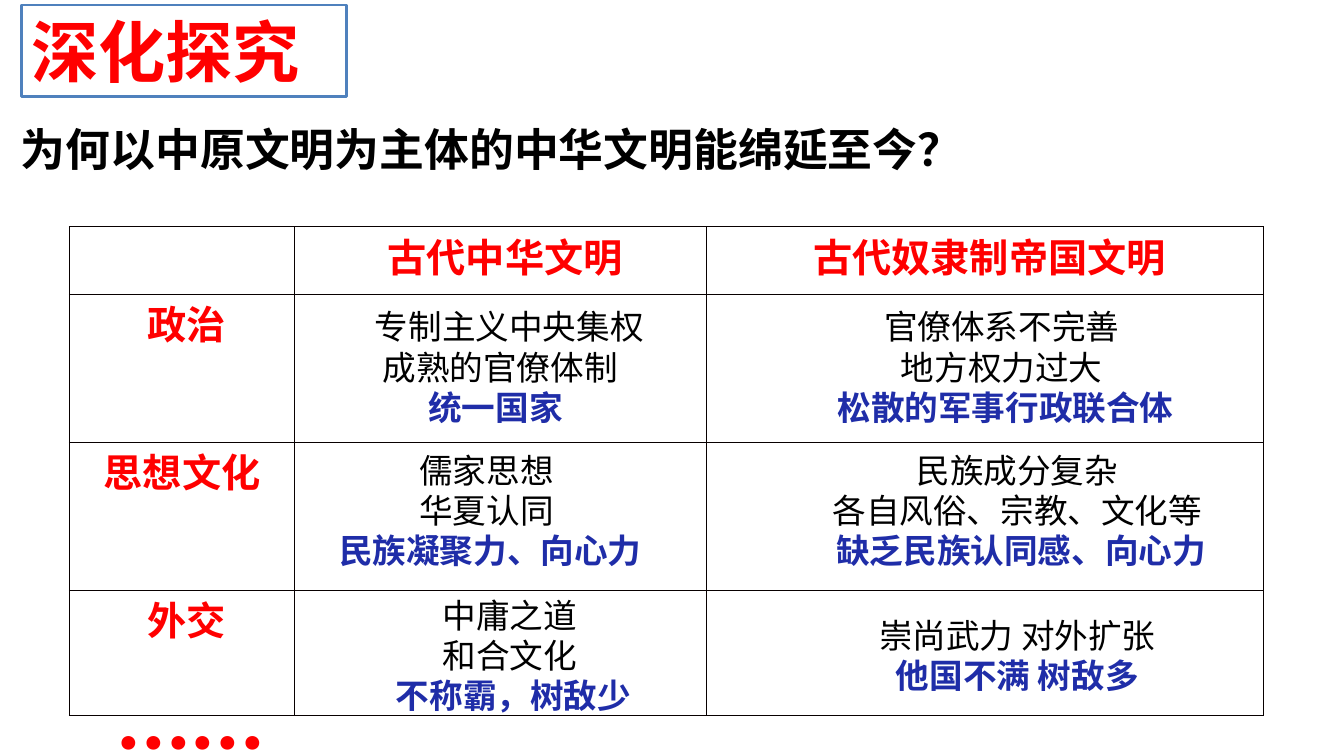
from lxml import etree
from pptx import Presentation
from pptx.dml.color import RGBColor
from pptx.enum.shapes import MSO_SHAPE
from pptx.enum.text import MSO_ANCHOR, PP_ALIGN
from pptx.oxml.ns import qn
from pptx.util import Inches, Pt

RECT = MSO_SHAPE.RECTANGLE
TOP = MSO_ANCHOR.TOP
LEFT, MID = PP_ALIGN.LEFT, PP_ALIGN.CENTER
RED, BLUE, BLACK, WHITE = "FF0000", "1F2DA8", "000000", "FFFFFF"
FRAME, GRID = "4F81BD", "080000"
HAN = "Noto Sans CJK SC"


def color(code):
    return RGBColor.from_string(code)


def write(par, text, size=24, font="Calibri", tint=BLACK, bold=False,
          align=LEFT, indent=0):
    par.alignment = align
    if indent:
        par._p.get_or_add_pPr().set("marL", str(Inches(indent)))
    run = par.add_run()
    run.text = text
    face = run.font
    face.size, face.name, face.bold = Pt(size), font, bold
    face.color.rgb = color(tint)
    east = etree.SubElement(run._r.get_or_add_rPr(), qn("a:ea"))
    east.set("typeface", HAN)


class Board:
    """Holds the slide and its style."""

    def __init__(self, deck):
        self.slide = deck.slides.add_slide(deck.slide_layouts[6])
        self.shapes = self.slide.shapes

    def frame(self, area, text, **style):
        box = self.shapes.add_shape(RECT, *map(Inches, area))
        box.shadow.inherit = False
        box.fill.solid()
        box.fill.fore_color.rgb = color(WHITE)
        box.line.color.rgb = color(FRAME)
        box.line.width = Pt(2)
        body = box.text_frame
        body.word_wrap = True
        body.vertical_anchor = TOP
        write(body.paragraphs[0], text, **style)

    def label(self, area, lines, wrap=False):
        body = self.shapes.add_textbox(*map(Inches, area)).text_frame
        body.word_wrap = wrap
        for i, (text, style) in enumerate(lines):
            par = body.add_paragraph() if i else body.paragraphs[0]
            write(par, text, **style)

    def note(self, area, lines, styles=None):
        """Plain lines, with the last one as the blue conclusion."""
        styles = styles or [{"align": MID}] * len(lines)
        looks = [dict(s) for s in styles]
        looks[-1].update(tint=BLUE, bold=True)
        self.label(area, list(zip(lines, looks)))

    def edge(self, cell):
        props = cell._tc.get_or_add_tcPr()
        for i, side in enumerate(("lnL", "lnR", "lnT", "lnB")):
            line = etree.Element(qn("a:" + side), w=str(Pt(1)))
            fill = etree.SubElement(line, qn("a:solidFill"))
            etree.SubElement(fill, qn("a:srgbClr"), val=GRID)
            props.insert(i, line)

    def table(self, area, widths, heights, texts):
        size = len(heights), len(widths)
        grid = self.shapes.add_table(*size, *map(Inches, area)).table
        grid.first_row = grid.horz_banding = False
        for col, width in zip(grid.columns, widths):
            col.width = Inches(width)
        for row, height in zip(grid.rows, heights):
            row.height = Inches(height)
        for r in range(size[0]):
            for c in range(size[1]):
                cell = grid.cell(r, c)
                cell.margin_left = cell.margin_right = Inches(0.07)
                cell.margin_top = cell.margin_bottom = 0
                cell.fill.background()
                self.edge(cell)
                if (r, c) in texts:
                    write(cell.text_frame.paragraphs[0], texts[r, c], size=28,
                          font=HAN, tint=RED, bold=True, align=MID)


def main():
    deck = Presentation()
    deck.slide_width, deck.slide_height = Inches(13.33), Inches(7.5)
    board = Board(deck)

    # Heading and question
    board.frame((0.21, 0.05, 3.23, 0.91), "深化探究",
                size=48, font="Arial", tint=RED, bold=True)
    board.label((0.11, 1.16, 13.1, 0.64), [
        ("为何以中原文明为主体的中华文明能绵延至今？",
         dict(size=32, font="Times New Roman", bold=True))], wrap=True)

    # Comparison grid
    board.table((0.69, 2.25, 11.84, 4.85), (2.23, 4.09, 5.52),
                (0.67, 1.47, 1.47, 1.24),
                {(0, 1): " 古代中华文明", (0, 2): " 古代奴隶制帝国文明",
                 (1, 0): " 政治", (2, 0): "思想文化", (3, 0): " 外交"})
    board.label((1.06, 6.47, 1.73, 1.21), [
        ("......", dict(size=66, tint=RED, bold=True))])

    # Chinese civilization
    board.note((3.62, 2.99, 2.87, 1.31),
               ["专制主义中央集权", " 成熟的官僚体制", "统一国家"],
               [{}, {}, {"indent": 0.53}])
    board.note((3.17, 4.41, 3.31, 1.31),
               ["儒家思想", "华夏认同", " 民族凝聚力、向心力"])
    board.note((3.4, 5.85, 3.31, 1.31),
               ["中庸之道", "和合文化", " 不称霸，树敌少"])

    # Slave-holding empires
    board.note((8.12, 2.99, 3.63, 1.31),
               ["官僚体系不完善", "地方权力过大", " 松散的军事行政联合体"])
    board.note((8.11, 4.41, 3.96, 1.31),
               ["民族成分复杂", "各自风俗、宗教、文化等", " 缺乏民族认同感、向心力"])
    board.note((8.61, 6.05, 2.96, 0.91),
               ["崇尚武力 对外扩张", "他国不满 树敌多"])

    deck.save("out.pptx")


if __name__ == "__main__":
    main()
